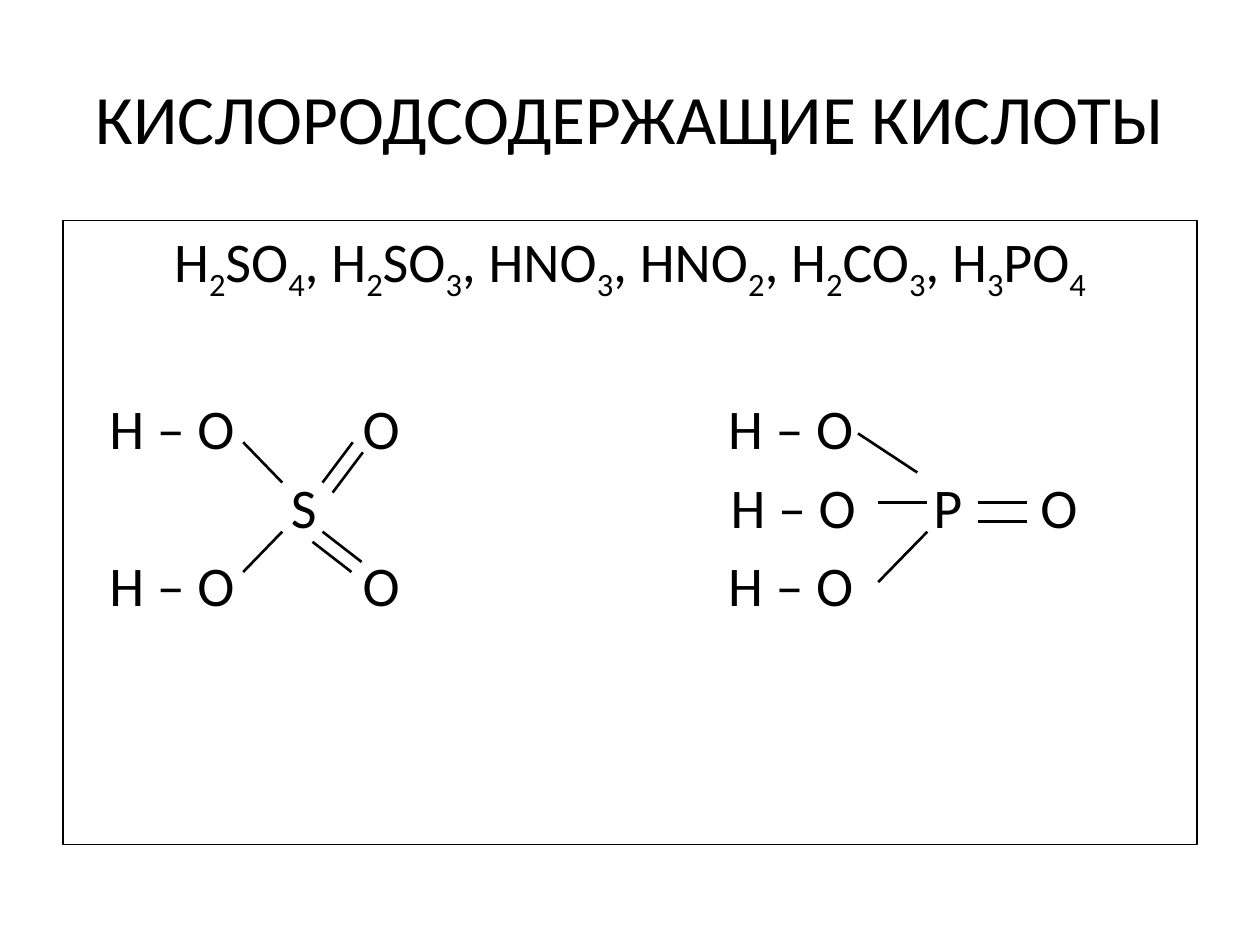
from lxml import etree
from pptx import Presentation
from pptx.dml.color import RGBColor
from pptx.enum.shapes import MSO_CONNECTOR, MSO_SHAPE
from pptx.enum.text import MSO_ANCHOR, PP_ALIGN
from pptx.oxml.ns import qn
from pptx.util import Inches, Pt

STRAIGHT = MSO_CONNECTOR.STRAIGHT
RECTANGLE = MSO_SHAPE.RECTANGLE
TOP, MIDDLE = MSO_ANCHOR.TOP, MSO_ANCHOR.MIDDLE
LEFT, CENTER = PP_ALIGN.LEFT, PP_ALIGN.CENTER

FONT, BLACK = "Calibri", "000000"
WIDTH, HEIGHT = 10, 7.5
MARGIN = WIDTH / 20
BODY_SIZE = 32
SPACE_BEFORE = 0.2 * BODY_SIZE
ROW_GAP = 58.2 - SPACE_BEFORE  # one empty row above the structures

TITLE = "КИСЛОРОДСОДЕРЖАЩИЕ КИСЛОТЫ"
ACIDS = "H2SO4, H2SO3, HNO3, HNO2, H2CO3, H3PO4"

# Rows of the two structures: (tab position in inches, atoms)
STRUCTURE_ROWS = [
    [(0.27, "H – O"), (2.28, "O"), (5.18, "H – O")],
    [(1.71, "S"), (5.2, "H – O"), (6.81, "P"), (7.66, "O")],
    [(0.27, "H – O"), (2.28, "O"), (5.18, "H – O")],
]

# Bonds: start, end; a double bond also has the shift of its second line
SINGLE_BONDS = [
    ((1.93, 3.51), (2.24, 3.83)),
    ((1.93, 4.54), (2.24, 4.22)),
    ((6.81, 3.44), (7.28, 3.75)),
    ((6.97, 3.99), (7.36, 3.99)),
    ((6.97, 4.62), (7.36, 4.22)),
]
DOUBLE_BONDS = [
    ((2.8, 3.51), (2.56, 3.83), (0.08, 0.08)),
    ((2.56, 4.22), (2.87, 4.46), (-0.08, 0.08)),
    ((7.76, 3.99), (8.15, 3.99), (0, 0.15)),
]


def color(value):
    return RGBColor.from_string(value)


def add_span(para, text, size):
    span = para.add_run()
    span.text = text
    span.font.name, span.font.size = FONT, Pt(size)
    span.font.color.rgb = color(BLACK)
    return span


def prepare_frame(box, anchor):
    frame = box.text_frame
    frame.word_wrap = True
    frame.vertical_anchor = anchor
    return frame


def add_formulas(para):
    para.alignment = CENTER
    para.space_before = Pt(SPACE_BEFORE)
    for symbol in ACIDS:
        span = add_span(para, symbol, BODY_SIZE)
        if symbol.isdigit():
            span.font._element.set("baseline", "-25000")


def add_structure_row(para, row, space):
    para.alignment = LEFT
    para.space_before = Pt(space)
    tabs = etree.SubElement(para._p.get_or_add_pPr(), qn("a:tabLst"))
    for position, _ in row:
        etree.SubElement(tabs, qn("a:tab"), pos=str(Inches(position)), algn="l")
    add_span(para, "".join("\t" + atoms for _, atoms in row), BODY_SIZE)


def add_bond(slide, start, end, shift=(0, 0)):
    points = [Inches(value + move) for point in (start, end)
              for value, move in zip(point, shift)]
    bond = slide.shapes.add_connector(STRAIGHT, *points)
    bond.line.color.rgb = color(BLACK)
    bond.line.width = Pt(1.5)
    etree.SubElement(bond._element.spPr, qn("a:effectLst"))


def main():
    deck = Presentation()
    deck.slide_width, deck.slide_height = Inches(WIDTH), Inches(HEIGHT)
    page = deck.slides.add_slide(deck.slide_layouts[6])
    left, width = Inches(MARGIN), Inches(WIDTH - 2 * MARGIN)

    # Title
    title = page.shapes.add_textbox(left, Inches(0.3), width, Inches(HEIGHT / 6))
    para = prepare_frame(title, MIDDLE).paragraphs[0]
    para.alignment = CENTER
    add_span(para, TITLE, 39.6)

    # Framed body: formulas, then the structures
    body = page.shapes.add_shape(RECTANGLE, left, Inches(1.75), width,
                                 Inches(0.66 * HEIGHT))
    body.shadow.inherit = False
    body.fill.background()
    body.line.color.rgb = color(BLACK)
    body.line.width = Pt(0.75)
    frame = prepare_frame(body, TOP)
    add_formulas(frame.paragraphs[0])
    for index, row in enumerate(STRUCTURE_ROWS):
        space = SPACE_BEFORE if index else ROW_GAP
        add_structure_row(frame.add_paragraph(), row, space)

    # Bonds
    for bond in SINGLE_BONDS:
        add_bond(page, *bond)
    for start, end, shift in DOUBLE_BONDS:
        add_bond(page, start, end)
        add_bond(page, start, end, shift)

    deck.save("out.pptx")


if __name__ == "__main__":
    main()
